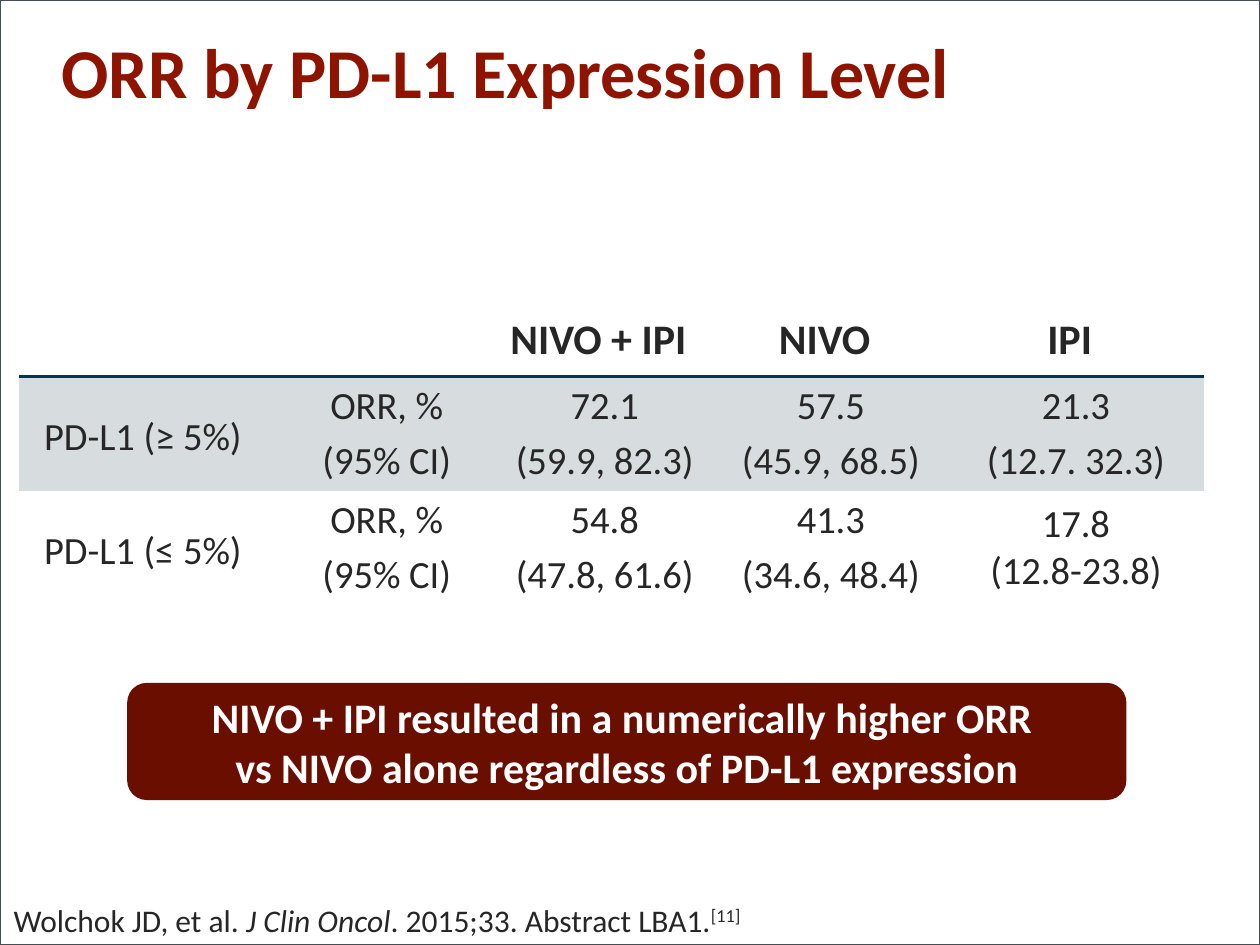
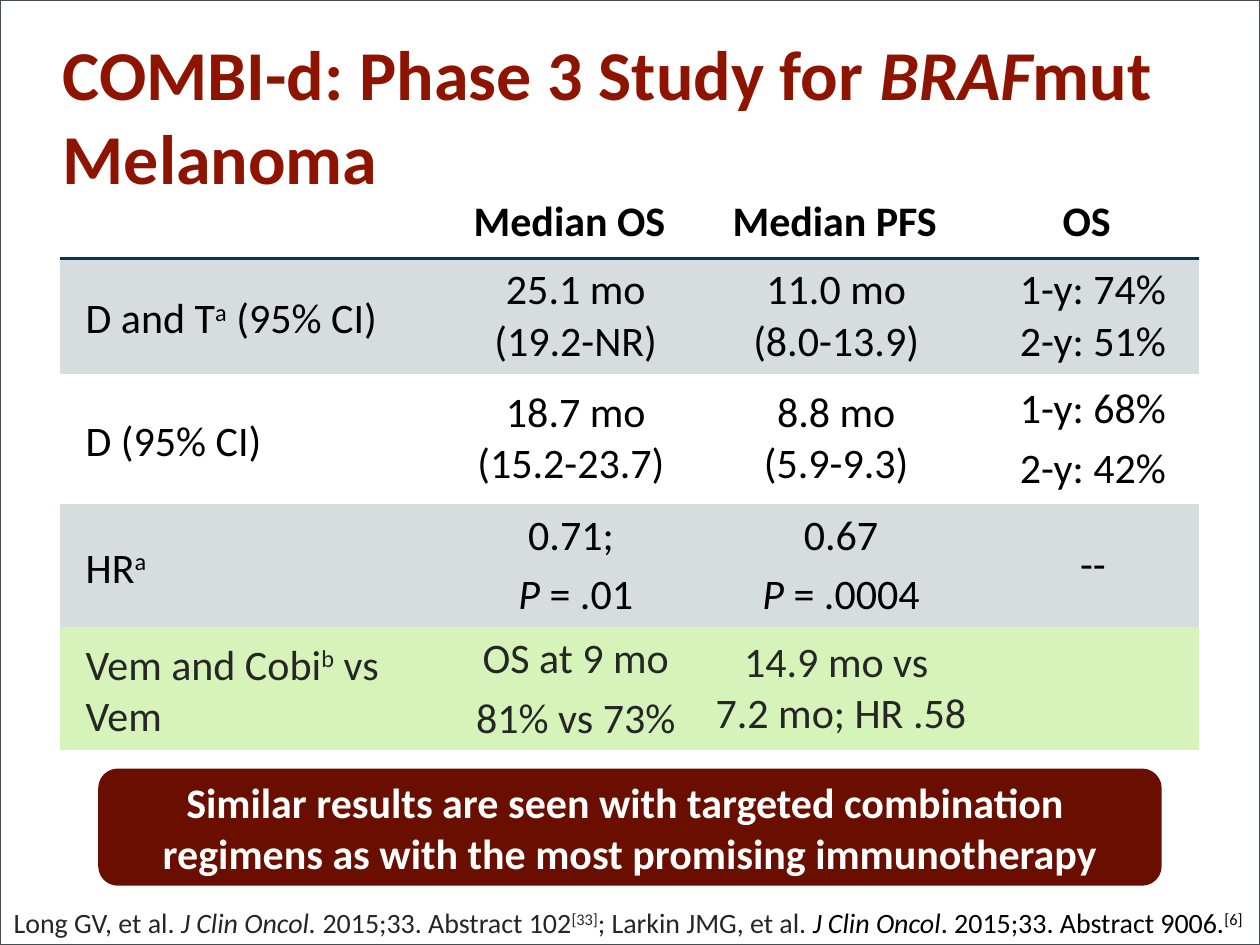
from lxml import etree
from pptx import Presentation
from pptx.dml.color import RGBColor
from pptx.enum.shapes import MSO_SHAPE
from pptx.enum.text import MSO_ANCHOR, PP_ALIGN
from pptx.oxml.ns import qn
from pptx.util import Inches, Pt

CENTER, LEFT = PP_ALIGN.CENTER, PP_ALIGN.LEFT
MIDDLE, BOTTOM = MSO_ANCHOR.MIDDLE, MSO_ANCHOR.BOTTOM
RECTANGLE, ROUNDED = MSO_SHAPE.RECTANGLE, MSO_SHAPE.ROUNDED_RECTANGLE

# Shared style
FONT = "Calibri"
WIDTH, HEIGHT = 10, 7.5
RED, DARK_RED = "8E1400", "6A0F00"
INK, BLACK, WHITE = "262626", "000000", "FFFFFF"
GREY, GREEN = "D7DCDF", "D6F4B9"
FRAME, RULE = "444E54", "003854"

ITALIC = {"italic": True}
RAISED = {"raised": True}


def color(value):
    return RGBColor.from_string(value)


# Text: a paragraph is a string or a list of spans,
# and a span is a string or a (text, format) pair.
def add_span(para, text, size, ink, bold=False, italic=False, raised=False):
    for number, line in enumerate(text.split("\n")):
        if number:
            para.add_line_break()
        span = para.add_run()
        span.text = line
        font = span.font
        font.name, font.size = FONT, Pt(size)
        font.bold, font.italic = bold, italic
        font.color.rgb = color(ink)
        if raised:
            span._r.get_or_add_rPr().set("baseline", "30000")


def write(frame, paragraphs, align=LEFT, line_spacing=None,
          space_percent=None, **style):
    for number, spans in enumerate(paragraphs):
        para = frame.add_paragraph() if number else frame.paragraphs[0]
        para.alignment = align
        if line_spacing:
            para.line_spacing = line_spacing
        if space_percent:
            before = etree.SubElement(para._p.get_or_add_pPr(), qn("a:spcBef"))
            etree.SubElement(before, qn("a:spcPct"), val=str(space_percent * 1000))
        for span in [spans] if isinstance(spans, str) else spans:
            text, extra = (span, {}) if isinstance(span, str) else span
            add_span(para, text, **{**style, **extra})


def add_text(page, left, top, width, height, spans, **style):
    box = page.shapes.add_textbox(Inches(left), Inches(top),
                                  Inches(width), Inches(height))
    box.text_frame.word_wrap = True
    write(box.text_frame, [spans], **style)


# Page parts
def add_page(deck):
    page = deck.slides.add_slide(deck.slide_layouts[6])
    page.background.fill.solid()
    page.background.fill.fore_color.rgb = color(WHITE)
    frame = page.shapes.add_shape(RECTANGLE, 0, 0, Inches(WIDTH), Inches(HEIGHT))
    frame.shadow.inherit = False
    frame.fill.background()
    frame.line.color.rgb = color(FRAME)
    frame.line.width = Pt(1.5)
    return page


def add_title(page, left, top, width, height, spans):
    add_text(page, left, top, width, height, spans, size=40, ink=RED, bold=True)


def add_callout(page, left, top, width, lines):
    box = page.shapes.add_shape(ROUNDED, Inches(left), Inches(top),
                                Inches(width), Inches(0.93))
    box.shadow.inherit = False
    box.fill.solid()
    box.fill.fore_color.rgb = color(DARK_RED)
    box.line.fill.background()
    frame = box.text_frame
    frame.word_wrap = False
    frame.vertical_anchor = MIDDLE
    write(frame, lines, align=CENTER, size=24, ink=WHITE, bold=True)


# Table parts
def set_borders(cell, ruled_side):
    props = cell._tc.get_or_add_tcPr()
    for place, side in enumerate(("lnL", "lnR", "lnT", "lnB")):
        line = etree.Element(qn(f"a:{side}"))
        if side == ruled_side:
            line.set("w", str(Pt(2.25)))
            fill = etree.SubElement(line, qn("a:solidFill"))
            etree.SubElement(fill, qn("a:srgbClr"), val=RULE)
        else:
            etree.SubElement(line, qn("a:noFill"))
        props.insert(place, line)


def set_insets(cell, left, top, right, bottom):
    cell.margin_left, cell.margin_top = Inches(left), Inches(top)
    cell.margin_right, cell.margin_bottom = Inches(right), Inches(bottom)


def fill_cell(cell, fill):
    if fill:
        cell.fill.solid()
        cell.fill.fore_color.rgb = color(fill)
    else:
        cell.fill.background()


def add_table(page, left, top, widths, heights, headers, rows, size, header_ink):
    """Each body row is (fill, ink, cells); a cell is a list of paragraphs."""
    table = page.shapes.add_table(
        len(heights), len(widths), Inches(left), Inches(top),
        Inches(sum(widths)), Inches(sum(heights))).table
    table.first_row = table.horz_banding = False
    for column, width in zip(table.columns, widths):
        column.width = Inches(width)
    for row, height in zip(table.rows, heights):
        row.height = Inches(height)

    for index, header in enumerate(headers):
        cell = table.cell(0, index)
        set_borders(cell, "lnB")
        fill_cell(cell, None)
        if header:
            set_insets(cell, 0, 0.05, 0.1, 0.1)
            cell.vertical_anchor = BOTTOM
            write(cell.text_frame, [header], align=CENTER, line_spacing=0.9,
                  size=24, ink=header_ink, bold=True)

    for row_index, (fill, ink, cells) in enumerate(rows, 1):
        for index, paragraphs in enumerate(cells):
            cell = table.cell(row_index, index)
            set_borders(cell, "lnT" if row_index == 1 else None)
            fill_cell(cell, fill)
            cell.vertical_anchor = MIDDLE
            if index == 0:
                set_insets(cell, 0.2, 0.05, 0.1, 0)
            write(cell.text_frame, paragraphs, align=CENTER if index else LEFT,
                  space_percent=20, size=size, ink=ink)


# Slides
def build_response_page(deck):
    page = add_page(deck)
    add_callout(page, 1.01, 5.42, 7.93, [
        "NIVO + IPI resulted in a numerically higher ORR ",
        "vs NIVO alone regardless of PD-L1 expression"])
    measure = ["ORR, %", "(95% CI)"]
    rows = [
        (GREY, INK, [["PD-L1 (≥ 5%)"], measure, ["72.1", "(59.9, 82.3)"],
                     ["57.5", "(45.9, 68.5)"], ["21.3", "(12.7. 32.3)"]]),
        (None, INK, [["PD-L1 (≤ 5%)"], measure, ["54.8", "(47.8, 61.6)"],
                     ["41.3", "(34.6, 48.4)"], ["17.8\n(12.8-23.8)"]]),
    ]
    add_table(page, 0.15, 2.12, [2.06, 1.72, 1.74, 1.85, 2.04],
              [0.87, 0.9, 0.9], ["", "", "NIVO + IPI", "NIVO", "IPI"],
              rows, size=22, header_ink=INK)
    add_text(page, 0.01, 7.1, 9.08, 0.4, [
        "Wolchok JD, et al. ", ("J Clin Oncol", ITALIC),
        ". 2015;33. Abstract LBA1.", ("[11]", RAISED)], size=18, ink=INK)
    add_title(page, 0.39, 0.18, 9.18, 0.77, "ORR by PD-L1 Expression Level")


def build_survival_page(deck):
    page = add_page(deck)
    p_value = ("P ", ITALIC)
    rows = [
        (GREY, BLACK, [[["D and T", ("a", RAISED), " (95% CI)"]],
                       ["25.1 mo (19.2-NR)"], ["11.0 mo \n(8.0-13.9) "],
                       ["1-y: 74% 2-y: 51%"]]),
        (None, BLACK, [["D (95% CI)"], ["18.7 mo (15.2-23.7) "],
                       ["8.8 mo \n(5.9-9.3) "], ["1-y: 68%", "2-y: 42%"]]),
        (GREY, BLACK, [[["HR", ("a", RAISED)]], ["0.71; ", [p_value, "= .01"]],
                       ["0.67", [p_value, "= .0004"]], ["--"]]),
        (GREEN, INK, [[["Vem and Cobi", ("b", RAISED), " vs Vem"]],
                      ["OS at 9 mo", "81% vs 73%"],
                      ["14.9 mo vs \n7.2 mo; HR .58"], []]),
    ]
    add_table(page, 0.48, 1.18, [3.14, 1.9, 2.31, 1.69],
              [0.87, 0.92, 1.03, 0.98, 0.97],
              ["", "Median OS", "Median PFS", "OS"],
              rows, size=24, header_ink=BLACK)
    add_text(page, 0.01, 7.14, 10.18, 0.37, [
        "Long GV, et al. ", ("J Clin Oncol. ", ITALIC),
        "2015;33. Abstract 102", ("[33]", RAISED), "; Larkin JMG, et al. ",
        ("J Clin Oncol", {"ink": BLACK, **ITALIC}),
        (". 2015;33. Abstract 9006.", {"ink": BLACK}),
        ("[6]", {"ink": BLACK, **RAISED})], size=16, ink=INK)
    add_title(page, 0.4, 0.19, 9.48, 1.45, [
        "COMBI-d: Phase 3 Study for ", ("BRAF", ITALIC), "mut Melanoma"])
    add_callout(page, 0.78, 6.1, 8.44, [
        "Similar results are seen with targeted combination ",
        "regimens as with the most promising immunotherapy"])


def main():
    deck = Presentation()
    deck.slide_width, deck.slide_height = Inches(WIDTH), Inches(HEIGHT)
    build_response_page(deck)
    build_survival_page(deck)
    deck.save("out.pptx")


if __name__ == "__main__":
    main()
